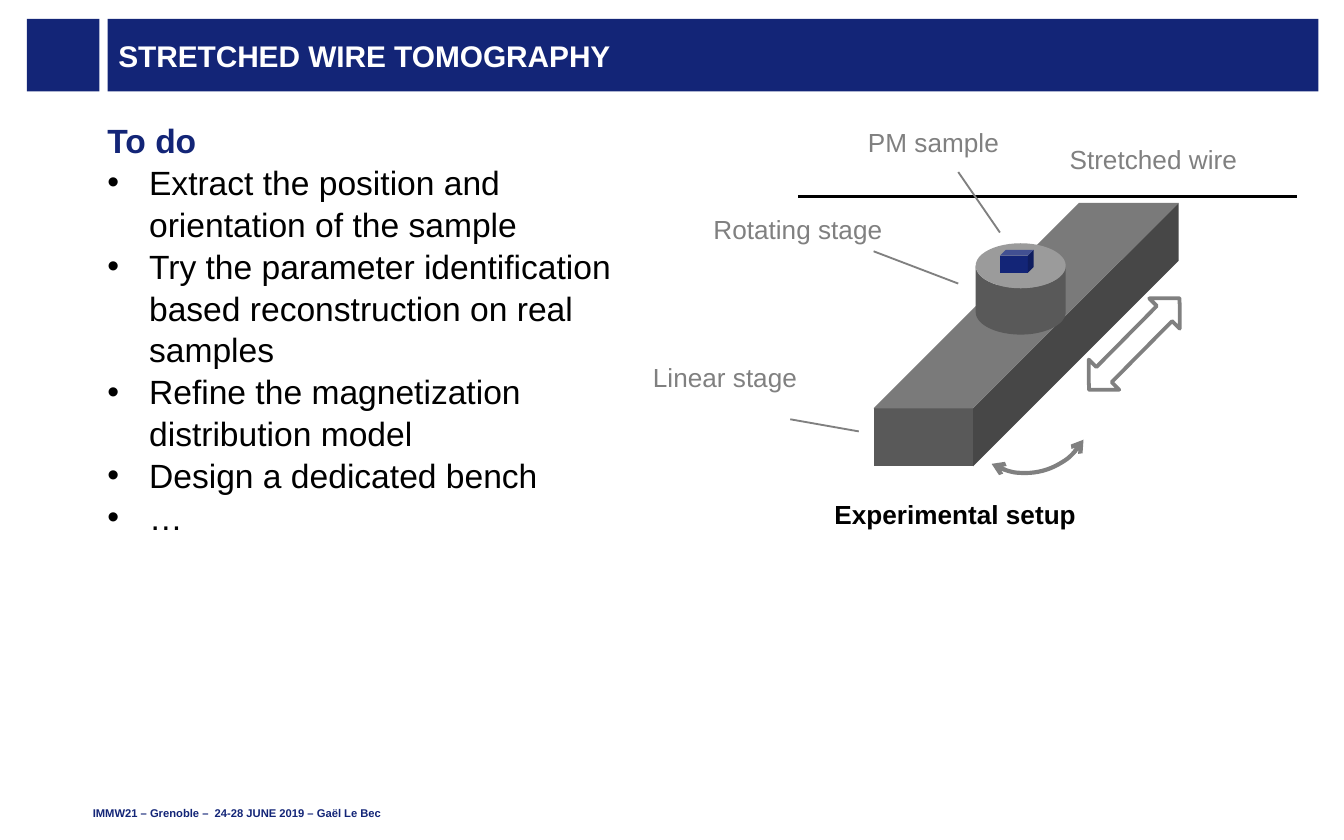
from dataclasses import dataclass

from lxml import etree
from pptx import Presentation
from pptx import util as u
from pptx.dml.color import RGBColor
from pptx.enum import shapes, text
from pptx.oxml.ns import qn

SCALE = 9144
NAVY, GREY, DARK, BLACK, WHITE = "132577", "808080", "595959", "000000", "FFFFFF"
KIND = shapes.MSO_SHAPE


@dataclass
class Label:
    words: str
    x: int
    y: int
    w: int
    color: str = GREY
    bold: bool = False


@dataclass
class Wire:
    x1: int
    y1: int
    x2: int
    y2: int
    color: str = GREY
    width: float = 1


@dataclass
class Solid:
    kind: shapes.MSO_SHAPE
    x: int
    y: int
    w: int
    h: int
    fill: str | None = DARK
    adj: float | None = None
    line: float | None = None
    turn: float = 0


def px(n: int) -> int:
    return u.Emu(n * SCALE)


def paint(code: str) -> RGBColor:
    return RGBColor.from_string(code)


def style(para, size: float, color: str, bold: bool = False) -> None:
    for run in para.runs:
        font = run.font
        font.name, font.size, font.bold = "Arial", u.Pt(size), bold
        font.color.rgb = paint(color)


def inset(frame, side: int = 0) -> None:
    frame.margin_left = frame.margin_right = px(side)
    frame.margin_top = frame.margin_bottom = 0


def add_solid(slide, item: Solid):
    shape = slide.shapes.add_shape(
        item.kind, px(item.x), px(item.y), px(item.w), px(item.h))
    shape.shadow.inherit = False
    shape.rotation = item.turn
    if item.adj is not None:
        shape.adjustments[0] = item.adj
    if item.fill:
        shape.fill.solid()
        shape.fill.fore_color.rgb = paint(item.fill)
    else:
        shape.fill.background()
    if item.line:
        shape.line.color.rgb = paint(GREY)
        shape.line.width = u.Pt(item.line)
    else:
        shape.line.fill.background()
    return shape


def add_wire(slide, item: Wire) -> None:
    line = slide.shapes.add_connector(
        shapes.MSO_CONNECTOR.STRAIGHT,
        px(item.x1), px(item.y1), px(item.x2), px(item.y2))
    line.line.color.rgb = paint(item.color)
    line.line.width = u.Pt(item.width)
    etree.SubElement(line._element.spPr, qn("a:effectLst"))


def add_label(slide, item: Label) -> None:
    box = slide.shapes.add_textbox(px(item.x), px(item.y), px(item.w), px(34))
    frame = box.text_frame
    frame.word_wrap = False
    frame.auto_size = text.MSO_AUTO_SIZE.SHAPE_TO_FIT_TEXT
    frame.text = item.words
    style(frame.paragraphs[0], 14, item.color, item.bold)


def add_title(slide, words: str) -> None:
    title = slide.shapes.title
    title.left, title.top, title.width, title.height = map(px, (80, 14, 901, 54))
    title.fill.solid()
    title.fill.fore_color.rgb = paint(NAVY)
    frame = title.text_frame
    frame.text = words
    frame.auto_size = text.MSO_AUTO_SIZE.NONE
    frame.vertical_anchor = text.MSO_ANCHOR.MIDDLE
    inset(frame, 8)
    frame.paragraphs[0].alignment = text.PP_ALIGN.LEFT
    style(frame.paragraphs[0], 16, WHITE, True)


def add_tasks(slide, head: str, tasks: list[str]) -> None:
    frame = slide.shapes.add_textbox(px(80), px(88), px(400), px(390)).text_frame
    frame.word_wrap = True
    inset(frame)
    frame.text = "\n".join([head, *tasks])
    for n, para in enumerate(frame.paragraphs):
        para.line_spacing = 1.04
        if n:
            props = para._p.get_or_add_pPr()
            props.set("marL", str(px(31)))
            props.set("indent", str(-px(31)))
            etree.SubElement(props, qn("a:buFont"), typeface="Arial")
            etree.SubElement(props, qn("a:buChar"), char="•")
        style(para, 18, BLACK if n else NAVY, not n)


def add_footer(slide, words: str) -> None:
    frame = slide.shapes.add_textbox(px(69), px(591), px(669), px(19)).text_frame
    frame.word_wrap = True
    frame.vertical_anchor = text.MSO_ANCHOR.BOTTOM
    inset(frame)
    frame.text = words
    style(frame.paragraphs[0], 6, NAVY, True)


TASKS = [
    "Extract the position and orientation of the sample",
    "Try the parameter identification based reconstruction on real samples",
    "Refine the magnetization distribution model",
    "Design a dedicated bench",
    "…",
]
SOLIDS = [
    Solid(KIND.RECTANGLE, 20, 14, 54, 54, NAVY),
    Solid(KIND.CUBE, 650, 151, 227, 196, adj=0.78),
    Solid(KIND.CAN, 726, 181, 67, 68, adj=0.5),
    Solid(KIND.CUBE, 744, 186, 25, 17, NAVY),
    Solid(KIND.LEFT_RIGHT_ARROW, 796, 240, 96, 32, None, line=2, turn=314.7),
]
SWING = Solid(KIND.ARC, 713, 252, 100, 100, None, line=2.25, turn=120.3)
WIRES = [
    Wire(594, 146, 965, 146, BLACK, 1.5),
    Wire(650, 187, 713, 211),
    Wire(588, 312, 639, 321),
    Wire(713, 128, 744, 173),
]
LABELS = [
    Label("Stretched wire", 786, 102, 145),
    Label("Rotating stage", 521, 154, 146),
    Label("Linear stage", 476, 264, 128),
    Label("PM sample", 636, 89, 118),
    Label("Experimental setup", 611, 366, 201, BLACK, True),
]


def main() -> None:
    deck = Presentation()
    deck.slide_width, deck.slide_height = px(1000), px(625)
    slide = deck.slides.add_slide(deck.slide_layouts[5])
    add_title(slide, "STRETCHED WIRE TOMOGRAPHY")
    add_tasks(slide, "To do", TASKS)
    add_footer(slide, "IMMW21 – Grenoble –  24-28 JUNE 2019 – Gaël Le Bec")
    for item in SOLIDS:
        add_solid(slide, item)
    swing = add_solid(slide, SWING)
    for end in ("a:headEnd", "a:tailEnd"):
        etree.SubElement(swing.line._get_or_add_ln(), qn(end), type="arrow")
    for item in WIRES:
        add_wire(slide, item)
    for item in LABELS:
        add_label(slide, item)
    deck.save("out.pptx")


if __name__ == "__main__":
    main()
